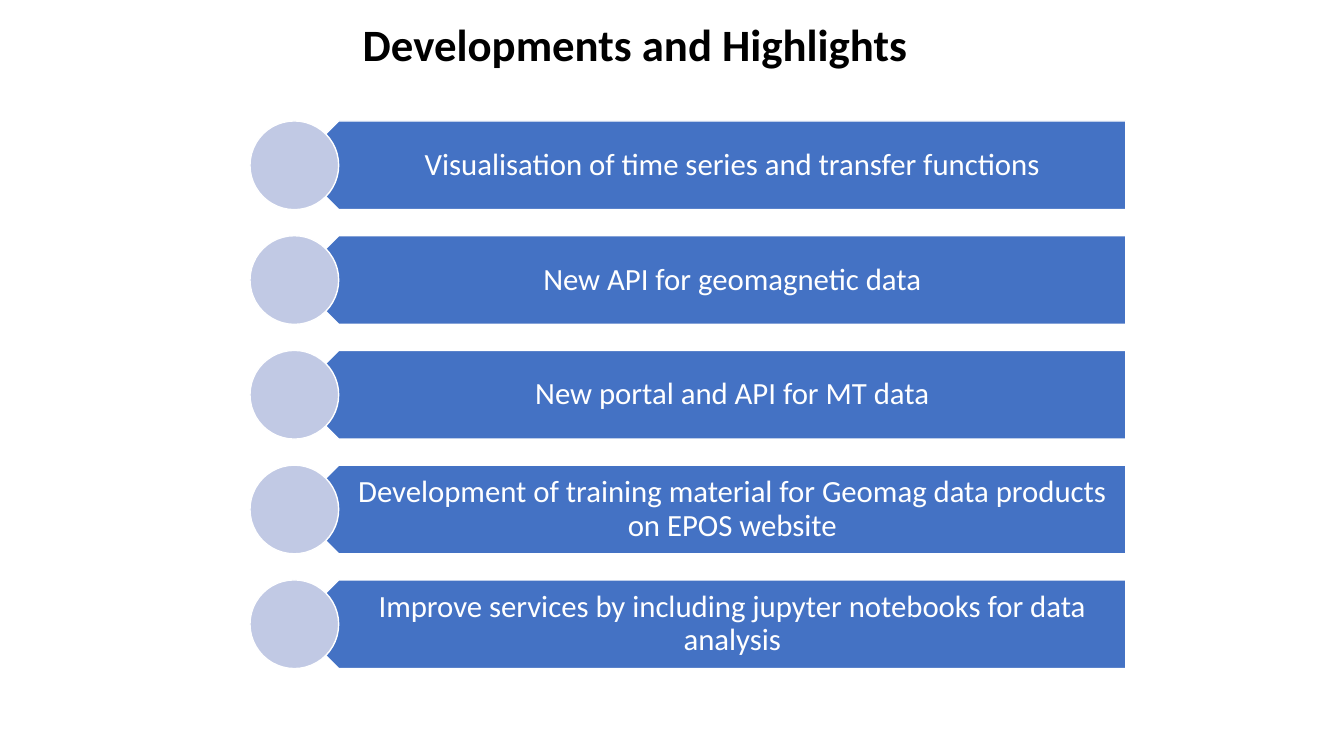
"""Build the slide of developments and highlights."""
import pptx
import pptx.dml.color
import pptx.enum.shapes
import pptx.enum.text
import pptx.util

Pt = pptx.util.Pt
SHAPES = pptx.enum.shapes.MSO_SHAPE
ALIGN = pptx.enum.text.PP_ALIGN
ANCHOR = pptx.enum.text.MSO_ANCHOR

HIGHLIGHTS = [
    "Visualisation of time series and transfer functions",
    "New API for geomagnetic data",
    "New portal and API for MT data",
    "Development of training material for Geomag data products on EPOS website",
    "Improve services by including jupyter notebooks for data analysis",
]
FIRST_TOP = 86.4
ROW_PITCH = 81.95
ROW_HEIGHT = 63.36


def color(value):
    return pptx.dml.color.RGBColor.from_string(value)


class SlideBuilder:
    font = "Calibri"
    bar_fill = "4472C4"
    circle_fill = "C1C9E4"
    white = "FFFFFF"
    black = "000000"

    def __init__(self, slide):
        self.slide = slide

    def shape(self, kind, left, top, width, height, fill, rotation=0):
        shape = self.slide.shapes.add_shape(
            kind, Pt(left), Pt(top), Pt(width), Pt(height))
        shape.shadow.inherit = False
        shape.rotation = rotation
        shape.fill.solid()
        shape.fill.fore_color.rgb = color(fill)
        shape.line.color.rgb = color(self.white)
        shape.line.width = Pt(1)

    def text(self, text, left, top, width, height, size, fill, bold=False,
             align=ALIGN.LEFT, anchor=ANCHOR.TOP, insets=(7.2, 3.6, 7.2, 3.6),
             line_spacing=1.0):
        box = self.slide.shapes.add_textbox(
            Pt(left), Pt(top), Pt(width), Pt(height))
        frame = box.text_frame
        frame.word_wrap = True
        frame.vertical_anchor = anchor
        (frame.margin_left, frame.margin_top,
         frame.margin_right, frame.margin_bottom) = map(Pt, insets)
        paragraph = frame.paragraphs[0]
        paragraph.alignment = align
        paragraph.line_spacing = line_spacing
        run = paragraph.add_run()
        run.text = text
        run.font.name = self.font
        run.font.size = Pt(size)
        run.font.bold = bold
        run.font.color.rgb = color(fill)

    def highlight(self, text, top):
        self.shape(SHAPES.PENTAGON, 210.24, top, 594, ROW_HEIGHT,
                   self.bar_fill, rotation=180)
        self.text(text, 226.08, top, 578.16, ROW_HEIGHT, 22, self.white,
                  align=ALIGN.CENTER, anchor=ANCHOR.MIDDLE,
                  insets=(28, 6.5, 12.2, 6.5), line_spacing=0.9)
        self.shape(SHAPES.OVAL, 178.56, top, ROW_HEIGHT, ROW_HEIGHT,
                   self.circle_fill)


def main():
    presentation = pptx.Presentation()
    presentation.slide_width = Pt(960)
    presentation.slide_height = Pt(540)
    slide = presentation.slides.add_slide(presentation.slide_layouts[6])
    builder = SlideBuilder(slide)
    builder.text("Developments and Highlights", 252, 8.64, 468, 46.08, 32,
                 builder.black, bold=True)
    for row, text in enumerate(HIGHLIGHTS):
        builder.highlight(text, FIRST_TOP + row * ROW_PITCH)
    presentation.save("out.pptx")


if __name__ == "__main__":
    main()
